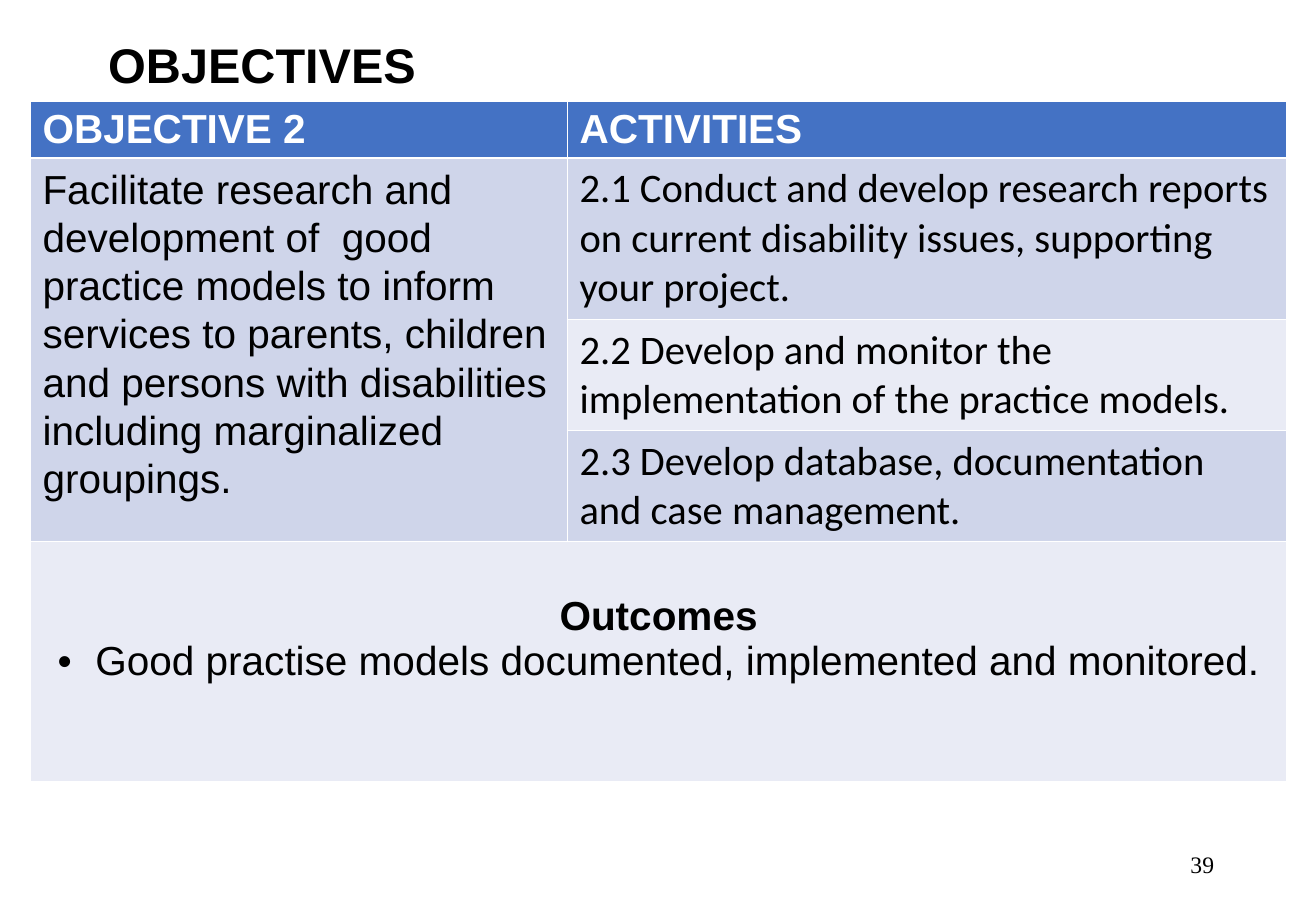
from lxml import etree
from pptx import Presentation
from pptx.dml.color import RGBColor
from pptx.enum import text as t
from pptx.oxml.ns import qn
from pptx.util import Inches, Pt

BLACK = RGBColor(0x00, 0x00, 0x00)
WHITE = RGBColor(0xFF, 0xFF, 0xFF)
BLUE = RGBColor(0x44, 0x72, 0xC4)
BAND = RGBColor(0xCF, 0xD5, 0xEA)
PALE = RGBColor(0xE9, 0xEB, 0xF5)
LEFT, MID, RIGHT = t.PP_ALIGN.LEFT, t.PP_ALIGN.CENTER, t.PP_ALIGN.RIGHT

TITLE = "OBJECTIVES"
HEADS = ["OBJECTIVE 2", "ACTIVITIES"]
GOAL = ("Facilitate research and development of  good practice models to inform "
        "services to parents, children and persons with disabilities including "
        "marginalized groupings.")
TASKS = [
    ["2.1 Conduct and develop research reports on current disability issues, "
     "supporting your project."],
    ["2.2 Develop and monitor the implementation of the practice models."],
    ["2.3 Develop database, documentation", "and case management."],
]
OUTCOME = "Good practise models documented, implemented and monitored."
PAGE = "39"

COLS = [4.42, 5.92]
ROWS = [0.46, 1.33, 0.91, 0.91, 1.98]
LAST = len(ROWS) - 1


def write(frame, words, first=True, font="Arial", size=24, color=BLACK,
          bold=False, align=LEFT, space=None, after=None, bullet=False):
    """Put one paragraph in a text frame."""
    para = frame.paragraphs[0] if first else frame.add_paragraph()
    para.text = words
    para.alignment = align
    if space:
        para.line_spacing = space
    if after:
        para.space_after = Pt(after)
    if bullet:
        props = para._p.get_or_add_pPr()
        props.set("marL", str(Inches(0.31)))
        props.set("indent", str(-Inches(0.31)))
        etree.SubElement(props, qn("a:buFont")).set("typeface", "Arial")
        etree.SubElement(props, qn("a:buChar")).set("char", "•")
    face = para.runs[0].font
    face.name, face.size, face.bold = font, Pt(size), bold
    face.color.rgb = color


def place(shape, left, top, width, height):
    shape.left, shape.top = Inches(left), Inches(top)
    shape.width, shape.height = Inches(width), Inches(height)


deck = Presentation()
deck.slide_width, deck.slide_height = Inches(10.83), Inches(7.5)
slide = deck.slides.add_slide(deck.slide_layouts[5])

title = slide.shapes.title
place(title, 0.42, 0.08, 9.25, 0.69)
head = title.text_frame
head.auto_size = t.MSO_AUTO_SIZE.NONE
head.vertical_anchor = t.MSO_ANCHOR.BOTTOM
head.margin_left, head.margin_bottom = Inches(0.47), 0
write(head, TITLE, size=28.8, bold=True, space=0.9)

grid = slide.shapes.add_table(len(ROWS), len(COLS), Inches(0.25), Inches(0.83),
                              Inches(sum(COLS)), Inches(sum(ROWS))).table
for col, width in zip(grid.columns, COLS):
    col.width = Inches(width)
for row, height in zip(grid.rows, ROWS):
    row.height = Inches(height)
grid.cell(1, 0).merge(grid.cell(len(TASKS), 0))
grid.cell(LAST, 0).merge(grid.cell(LAST, 1))

for r in range(len(ROWS)):
    for c in range(len(COLS)):
        fill = grid.cell(r, c).fill
        fill.solid()
        fill.fore_color.rgb = BLUE if r == 0 else BAND if r % 2 else PALE

for c, words in enumerate(HEADS):
    write(grid.cell(0, c).text_frame, words, color=WHITE, bold=True)
write(grid.cell(1, 0).text_frame, GOAL, space=1.07, after=9)
for r, lines in enumerate(TASKS, 1):
    for i, words in enumerate(lines):
        write(grid.cell(r, 1).text_frame, words, first=i == 0, font="Calibri")

result = grid.cell(LAST, 0)
result.margin_top = Inches(0.43)
write(result.text_frame, "Outcomes", bold=True, align=MID)
write(result.text_frame, OUTCOME, first=False, align=MID, bullet=True)

box = slide.shapes.add_textbox(0, 0, 0, 0)
place(box, 7.65, 6.95, 2.44, 0.4)
box.text_frame.word_wrap = True
write(box.text_frame, PAGE, font="Times New Roman", size=14, align=RIGHT)

deck.save("out.pptx")
